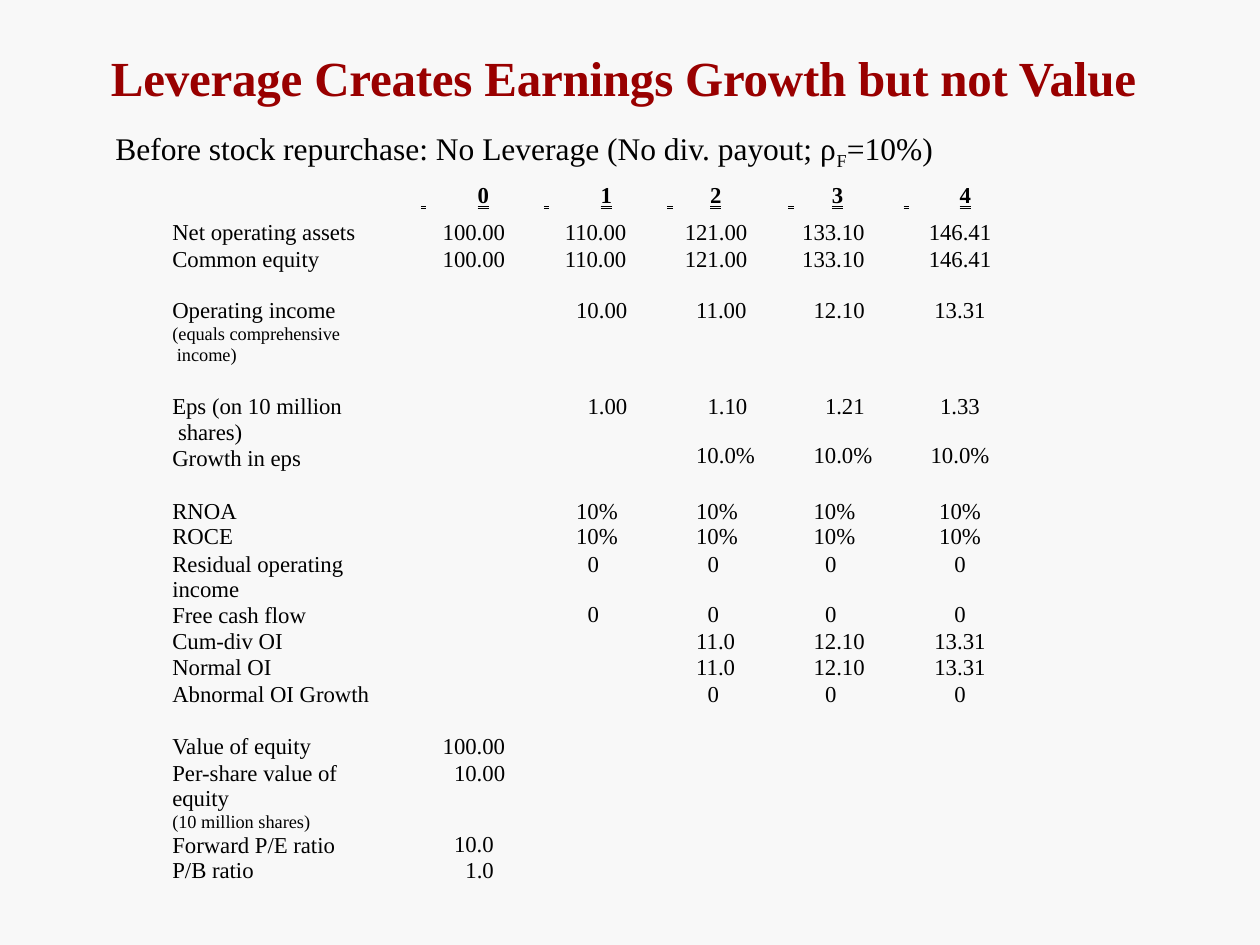
from lxml import etree
from pptx import Presentation
from pptx.dml.color import RGBColor
from pptx.enum.text import MSO_ANCHOR, MSO_AUTO_SIZE, MSO_UNDERLINE, PP_ALIGN
from pptx.oxml.ns import qn
from pptx.util import Pt

LEFT, CENTER = PP_ALIGN.LEFT, PP_ALIGN.CENTER
TOP = MSO_ANCHOR.TOP
NO_AUTOFIT = MSO_AUTO_SIZE.NONE
DOUBLE_UNDERLINE = MSO_UNDERLINE.DOUBLE_LINE

FONT = "Times New Roman"
BLACK, DARK_RED, PALE_GREY = "000000", "990000", "F8F8F8"
PLAIN_TABLE_STYLE = "{2D5ABB26-0587-4C30-8999-92F81FD0307C}"


def style_run(run, size, color=BLACK, bold=False):
    run.font.name = FONT
    run.font.size = Pt(size)
    run.font.bold = bold
    run.font.color.rgb = RGBColor.from_string(color)


def prepare_frame(text_frame):
    """Remove the insets and anchor the text at the top."""
    text_frame.margin_left = text_frame.margin_right = Pt(0)
    text_frame.margin_top = Pt(1)
    text_frame.margin_bottom = Pt(0)
    text_frame.vertical_anchor = TOP
    text_frame.word_wrap = True
    text_frame.auto_size = NO_AUTOFIT


presentation = Presentation()
presentation.slide_width, presentation.slide_height = Pt(720), Pt(540)
slide = presentation.slides.add_slide(presentation.slide_layouts[5])
slide.background.fill.solid()
slide.background.fill.fore_color.rgb = RGBColor.from_string(PALE_GREY)

# Title
title = slide.shapes.title
title.left, title.top, title.width, title.height = Pt(63.4), Pt(26), Pt(598), Pt(35)
prepare_frame(title.text_frame)
title.text_frame.text = "Leverage Creates Earnings Growth but not Value"
paragraph = title.text_frame.paragraphs[0]
paragraph.alignment = LEFT
paragraph.space_before = Pt(0.9)
style_run(paragraph.runs[0], 28, DARK_RED, bold=True)
paragraph.runs[0]._r.get_or_add_rPr().set("spc", "-10")

# Subtitle with a subscript
subtitle = slide.shapes.add_textbox(Pt(66), Pt(72.7), Pt(490), Pt(24))
prepare_frame(subtitle.text_frame)
paragraph = subtitle.text_frame.paragraphs[0]
paragraph.space_before = Pt(1)
for text in ("Before stock repurchase: No Leverage (No div. payout; ρ", "F", "=10%)"):
    run = paragraph.add_run()
    run.text = text
    style_run(run, 18)
paragraph.runs[1]._r.get_or_add_rPr().set("baseline", "-21000")

# Rows: height, top margin, line spacing, gap before a second value, texts by column
ROWS = [
    (18, 0, 14.2, 0, ["", " \t0", " \t1", " \t2", " \t3", " \t4"]),
    (18, 2.2, 15.1, 0,
     ["Net operating assets", "100.00", "110.00", "121.00", "133.10", "146.41"]),
    (22.3, 0, 14.4, 0,
     ["Common equity", "100.00", "110.00", "121.00", "133.10", "146.41"]),
    (54.7, 6.5, 14.9, 0,
     ["Operating income\n(equals comprehensive\v income)",
      "", "10.00", "11.00", "12.10", "13.31"]),
    (59.8, 6.5, 14.9, 13,
     ["Eps (on 10 million\v shares)\nGrowth in eps",
      "", "1.00", "1.10\n10.0%", "1.21\n10.0%", "1.33\n10.0%"]),
    (22.3, 6.5, 15.1, 0, ["RNOA", "", "10%", "10%", "10%", "10%"]),
    (15.1, 0, 13.9, 0, ["ROCE", "", "10%", "10%", "10%", "10%"]),
    (44.6, 0, 14.6, 14,
     ["Residual operating\nincome\nFree cash flow", "", "0\n0", "0\n0", "0\n0", "0\n0"]),
    (15.1, 0, 13.9, 0, ["Cum-div OI", "", "", "11.0", "12.10", "13.31"]),
    (15.1, 0, 13.9, 0, ["Normal OI", "", "", "11.0", "12.10", "13.31"]),
    (22.3, 0, 14.4, 0, ["Abnormal OI Growth", "", "", "0", "0", "0"]),
    (22.3, 6.5, 15.1, 0, ["Value of equity", "100.00", "", "", "", ""]),
    (56.9, 0, 14.6, 26,
     ["Per-share value of\nequity\n(10 million shares)\nForward P/E ratio",
      "10.00\n10.0", "", "", "", ""]),
    (14.4, 0, 13.6, 0, ["P/B ratio", "1.0", "", "", "", ""]),
]
COLUMN_WIDTHS = [131, 76.3, 70.6, 69.1, 67, 71.3]
HEADER_INDENTS = [0, 13, 7, 7, 7, 6]
HEADER_TABS = [0, 32.5, 32.5, 24.5, 25, 32]
VALUE_INDENTS = [2, 25.5, 19, 17, 15, 5]
DIGIT_WIDTH = 6.5
LAST_COLUMN = len(COLUMN_WIDTHS) - 1

frame = slide.shapes.add_table(len(ROWS), len(COLUMN_WIDTHS), Pt(96.5), Pt(105.1),
                               Pt(sum(COLUMN_WIDTHS)), Pt(sum(row[0] for row in ROWS)))
table = frame.table
table.first_row = table.horz_banding = False
table._tbl.tblPr.find(qn("a:tableStyleId")).text = PLAIN_TABLE_STYLE
for column, width in zip(table.columns, COLUMN_WIDTHS):
    column.width = Pt(width)

for row_index, (height, top_margin, line, gap, texts) in enumerate(ROWS):
    table.rows[row_index].height = Pt(height)
    is_header = row_index == 0
    for column_index, text in enumerate(texts):
        cell = table.cell(row_index, column_index)
        cell.fill.solid()
        cell.fill.fore_color.rgb = RGBColor.from_string(PALE_GREY)
        indents = HEADER_INDENTS if is_header else VALUE_INDENTS
        cell.margin_left = Pt(indents[column_index])
        cell.margin_top = Pt(top_margin)
        cell.margin_right = cell.margin_bottom = Pt(0)
        cell.vertical_anchor = TOP
        cell.text_frame.text = text

        for position, paragraph in enumerate(cell.text_frame.paragraphs):
            if not text:
                etree.SubElement(paragraph._p, qn("a:endParaRPr")).set("sz", "800")
                continue
            is_note = paragraph.text.startswith("(")
            paragraph.line_spacing = Pt(12 if is_note else line)
            for run in paragraph.runs:
                style_run(run, 10.5 if is_note else 13, bold=is_header)
                if is_header:
                    run.font.underline = DOUBLE_UNDERLINE
            properties = paragraph._p.get_or_add_pPr()
            if is_header:
                tabs = etree.SubElement(properties, qn("a:tabLst"))
                etree.SubElement(tabs, qn("a:tab"), algn="l",
                                 pos=str(Pt(HEADER_TABS[column_index])))
            elif column_index == LAST_COLUMN:
                paragraph.alignment = CENTER
            elif column_index > 0:
                digits = len(paragraph.text.rstrip("%").split(".")[0])
                properties.set("marL", str(Pt(DIGIT_WIDTH * (3 - digits))))
                properties.set("indent", "0")
            if column_index > 0 and position > 0:
                paragraph.space_before = Pt(gap)

presentation.save("out.pptx")
